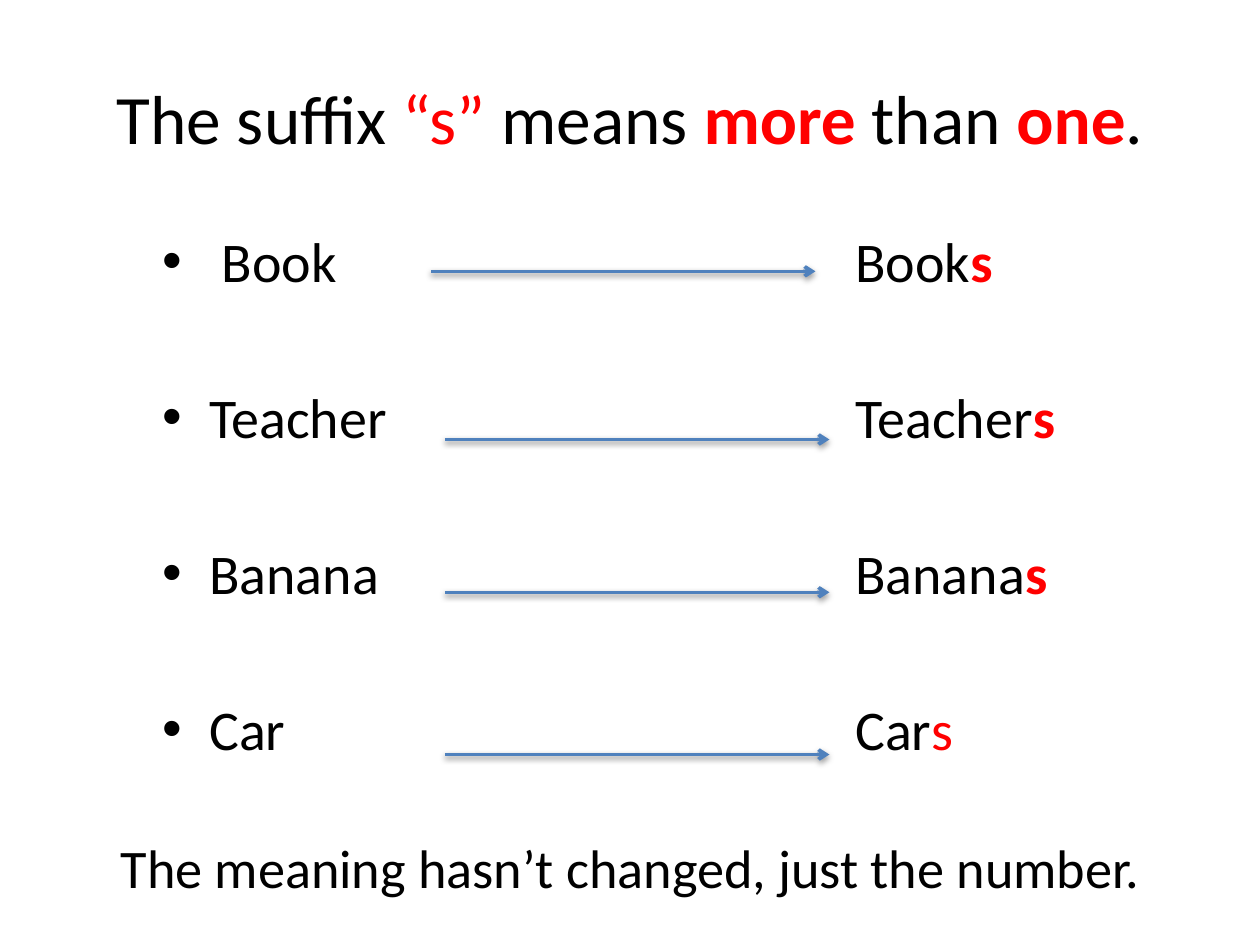
from lxml.etree import SubElement
from pptx import Presentation
from pptx.dml.color import RGBColor
from pptx.enum.shapes import MSO_CONNECTOR as Connector
from pptx.enum.text import MSO_ANCHOR as Anchor, MSO_AUTO_SIZE as AutoSize, PP_ALIGN as Align
from pptx.oxml import parse_xml
from pptx.oxml.ns import nsdecls, qn
from pptx.util import Cm, Pt

COLORS = {"text": "000000", "accent": "FF0000", "arrow": "4F81BD"}
SHADOW = (
    f'<a:effectLst {nsdecls("a")}>'
    '<a:outerShdw blurRad="40000" dist="20000" dir="5400000" rotWithShape="0">'
    '<a:srgbClr val="000000"><a:alpha val="38000"/></a:srgbClr>'
    "</a:outerShdw></a:effectLst>"
)


def add_span(para, text, size, color="text", bold=False):
    span = para.add_run()
    span.text = text
    span.font.name = "Calibri"
    span.font.size = Pt(size)
    span.font.bold = bold
    span.font.color.rgb = RGBColor.from_string(COLORS[color])


def set_frame(box, left, top, width, height, anchor):
    box.left, box.top, box.width, box.height = Cm(left), Cm(top), Cm(width), Cm(height)
    frame = box.text_frame
    frame.word_wrap = True
    frame.auto_size = AutoSize.NONE
    frame.vertical_anchor = anchor
    return frame


deck = Presentation()
deck.slide_width, deck.slide_height = Cm(25.4), Cm(19.05)
page = deck.slides.add_slide(deck.slide_layouts[5])

# Title
frame = set_frame(page.shapes.title, 1.27, 0.76, 22.86, 3.18, Anchor.MIDDLE)
para = frame.paragraphs[0]
para.alignment = Align.CENTER
for text, color, bold in [
    ("The suffix ", "text", False),
    ("“s” ", "accent", False),
    ("means ", "text", False),
    ("more ", "accent", True),
    ("than ", "text", False),
    ("one", "accent", True),
    (".", "text", False),
]:
    add_span(para, text, 39.6, color, bold)

# Word pairs: bulleted singular, then the plural at a tab stop
box = page.shapes.add_textbox(0, 0, 0, 0)
frame = set_frame(box, 3.02, 4.45, 22.86, 12.57, Anchor.TOP)
pairs = [(" Book", "Book", True), ("Teacher", "Teacher", True),
         ("Banana", "Banana", True), ("Car", "Car", False)]
for row, (singular, stem, bold) in enumerate(pairs):
    para = frame.add_paragraph() if row else frame.paragraphs[0]
    para.space_before = Pt(50.6 if row else 0)
    add_span(para, f"{singular}\t{stem}", 32)
    add_span(para, "s", 32, "accent", bold)
    props = para._p.get_or_add_pPr()
    props.set("marL", str(Cm(0.95)))
    props.set("indent", str(Cm(-0.95)))
    SubElement(props, qn("a:buFont"), typeface="Arial")
    SubElement(props, qn("a:buChar"), char="•")
    stops = SubElement(props, qn("a:tabLst"))
    SubElement(stops, qn("a:tab"), pos=str(Cm(13.97)), algn="l")

# Arrows from singular to plural
for left, top in [(8.69, 5.47), (8.97, 8.86), (8.97, 11.94), (8.97, 15.21)]:
    arrow = page.shapes.add_connector(
        Connector.STRAIGHT, Cm(left), Cm(top), Cm(left + 7.75), Cm(top))
    arrow.line.width = Pt(2)
    arrow.line.color.rgb = RGBColor.from_string(COLORS["arrow"])
    SubElement(arrow.line._get_or_add_ln(), qn("a:tailEnd"), type="arrow")
    arrow._element.spPr.append(parse_xml(SHADOW))

# Closing sentence
box = page.shapes.add_textbox(0, 0, 0, 0)
frame = set_frame(box, 1.27, 15.88, 22.86, 3.18, Anchor.MIDDLE)
para = frame.paragraphs[0]
para.alignment = Align.CENTER
add_span(para, "The meaning hasn’t changed, just the number.", 31)

deck.save("out.pptx")
